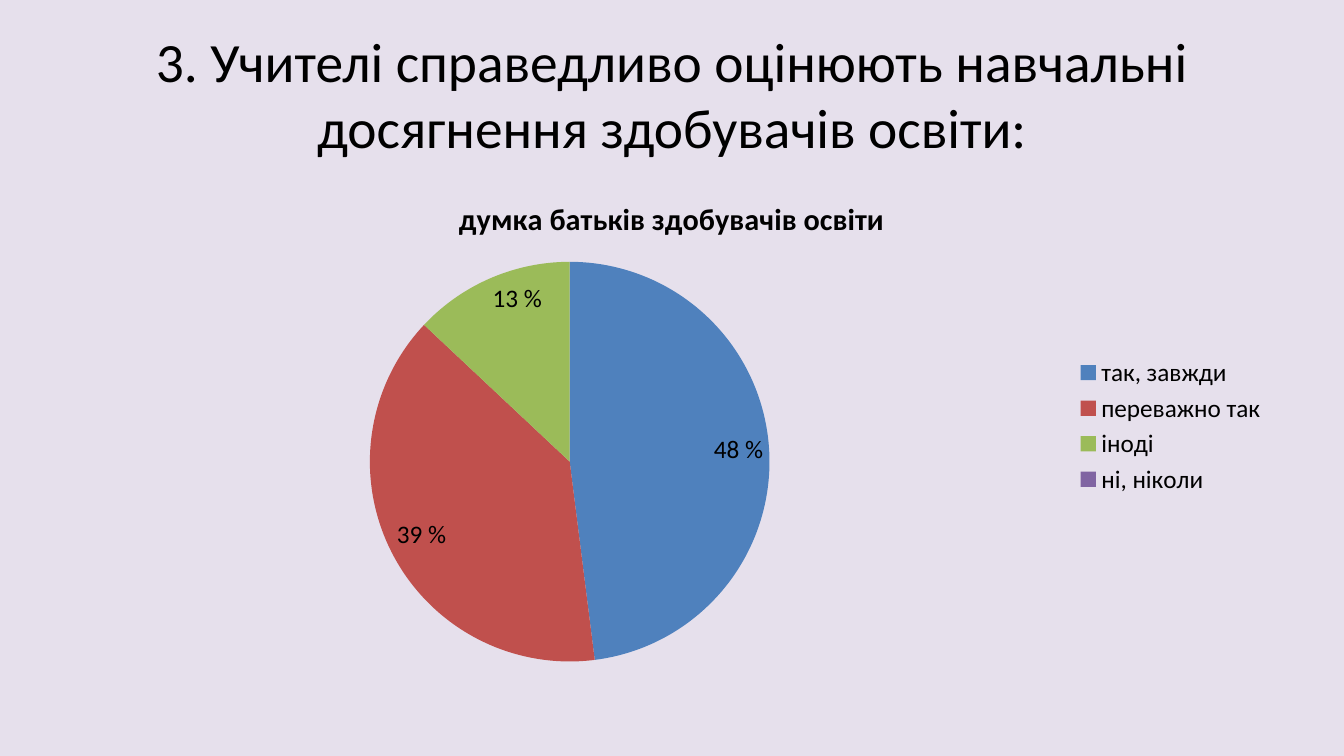
"""Build the survey slide on fair assessment of learning achievements."""
from pptx import Presentation
from pptx import util as u
from pptx.chart.data import CategoryChartData
from pptx.dml.color import RGBColor
from pptx.enum import chart as ch, text

FONT = "Calibri"
BACKGROUND = RGBColor(0xE6, 0xE0, 0xEC)
BLACK = RGBColor(0, 0, 0)
BLUE = RGBColor(0x4F, 0x81, 0xBD)
RED = RGBColor(0xC0, 0x50, 0x4D)
GREEN = RGBColor(0x9B, 0xBB, 0x59)
PURPLE = RGBColor(0x80, 0x64, 0xA2)

QUESTION = "3. Учителі справедливо оцінюють навчальні досягнення здобувачів освіти:"
RESPONDENTS = "думка батьків здобувачів освіти"
ANSWERS = [
    ("так, завжди", 0.48, BLUE),
    ("переважно так", 0.39, RED),
    ("іноді", 0.13, GREEN),
    ("ні, ніколи", None, PURPLE),
]


def style_font(font, size, bold=False):
    """Apply the slide's typeface and colour at the given size."""
    font.name = FONT
    font.size = u.Pt(size)
    font.bold = bold
    font.color.rgb = BLACK


def write(frame, wording, size, bold=False, align=text.PP_ALIGN.CENTER):
    """Put one formatted paragraph into a text frame."""
    paragraph = frame.paragraphs[0]
    paragraph.alignment = align
    run = paragraph.add_run()
    run.text = wording
    style_font(run.font, size, bold)


def add_question(slide, left, top, width, height):
    """Place the question centred in its box."""
    frame = slide.shapes.add_textbox(left, top, width, height).text_frame
    frame.word_wrap = True
    frame.vertical_anchor = text.MSO_ANCHOR.MIDDLE
    write(frame, QUESTION, 39.6)


def add_answers(slide, left, top, width, height):
    """Place the pie of answers with its title, legend and labels."""
    names, shares, colours = zip(*ANSWERS)
    data = CategoryChartData()
    data.categories = names
    data.add_series(RESPONDENTS, shares)
    pie = slide.shapes.add_chart(
        ch.XL_CHART_TYPE.PIE, left, top, width, height, data).chart
    style_font(pie.font, 18)

    pie.has_title = True
    write(pie.chart_title.text_frame, RESPONDENTS, 21.6, bold=True)
    pie.chart_title.include_in_layout = False

    pie.has_legend = True
    pie.legend.position = ch.XL_LEGEND_POSITION.RIGHT
    pie.legend.include_in_layout = False

    plot = pie.plots[0]
    plot.vary_by_categories = True
    for index, colour in enumerate(colours):
        slice_fill = plot.series[0].points[index].format.fill
        slice_fill.solid()
        slice_fill.fore_color.rgb = colour

    plot.has_data_labels = True
    labels = plot.data_labels
    labels.show_value = True
    labels.show_percentage = False
    labels.number_format = r"0\ %"
    labels.number_format_is_linked = False
    labels.position = ch.XL_LABEL_POSITION.INSIDE_END
    style_font(labels.font, 18)


def main():
    """Assemble and save the slide."""
    deck = Presentation()
    deck.slide_width, deck.slide_height = u.Cm(33.87), u.Cm(19.05)
    slide = deck.slides.add_slide(deck.slide_layouts[6])
    slide.background.fill.solid()
    slide.background.fill.fore_color.rgb = BACKGROUND

    margin = u.Cm(1.69)
    width = deck.slide_width - 2 * margin
    add_question(slide, margin, u.Cm(0.76), width, u.Cm(3.18))
    add_answers(slide, margin, u.Cm(4.45), width, u.Cm(12.57))
    deck.save("out.pptx")


if __name__ == "__main__":
    main()
